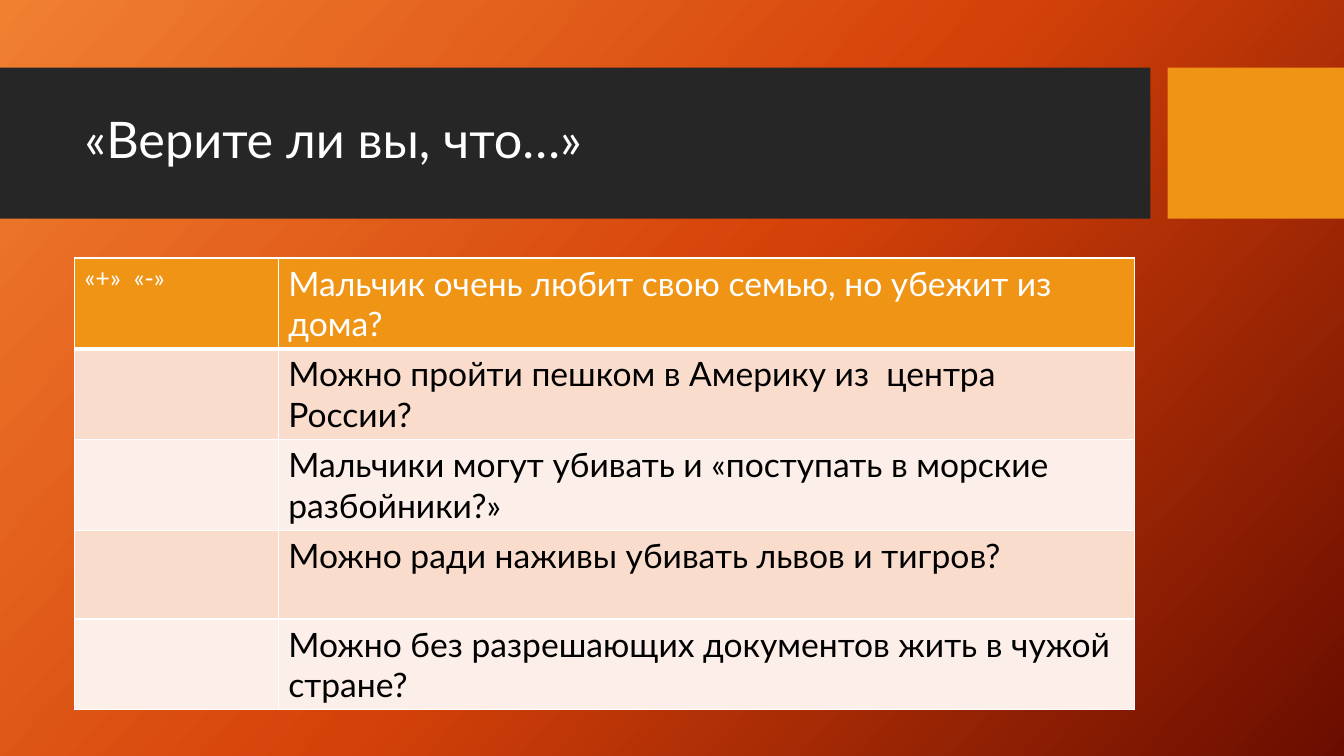
from copy import deepcopy

from lxml import etree
from pptx import Presentation
from pptx.dml.color import RGBColor
from pptx.enum.shapes import MSO_SHAPE
from pptx.enum.text import MSO_ANCHOR, MSO_AUTO_SIZE, PP_ALIGN
from pptx.oxml.ns import qn
from pptx.util import Inches, Pt

RECTANGLE = MSO_SHAPE.RECTANGLE
MIDDLE = MSO_ANCHOR.MIDDLE
LEFT = PP_ALIGN.LEFT
NO_AUTOFIT = MSO_AUTO_SIZE.NONE

WHITE = RGBColor(0xFF, 0xFF, 0xFF)
BLACK = RGBColor(0x00, 0x00, 0x00)
CHARCOAL = RGBColor(0x26, 0x26, 0x26)
AMBER = RGBColor(0xF0, 0x94, 0x15)
PEACH = RGBColor(0xF9, 0xDC, 0xCC)
PALE_PEACH = RGBColor(0xFC, 0xEE, 0xE8)

FONT = "Lato"
TITLE = "«Верите ли вы, что…»"
ANSWER_HEADING = "«+»  «-»"
QUESTIONS = [
    "Мальчик очень любит свою семью, но убежит из дома?",
    "Можно пройти пешком в Америку из  центра России?",
    "Мальчики могут убивать и «поступать в морские разбойники?»",
    "Можно ради наживы убивать львов и тигров?",
    "Можно без разрешающих документов жить в чужой стране?",
]
GRADIENT = [
    (0, RGBColor(0xF1, 0x80, 0x31)),
    (0.5, RGBColor(0xD5, 0x42, 0x09)),
    (1, RGBColor(0x6A, 0x0D, 0x00)),
]
GRADIENT_ANGLE = 360 - 42

SLIDE_WIDTH, SLIDE_HEIGHT = 13.33, 7.5
BAND_TOP, BAND_HEIGHT = 0.67, 1.5
BANDS = [(0, 11.41, CHARCOAL), (11.58, 1.75, AMBER)]
CONTENT_LEFT, CONTENT_WIDTH = 0.74, 10.51
TITLE_TOP, TITLE_HEIGHT = 0.82, 1.18
TABLE_TOP, ROW_HEIGHT = 2.56, 0.88
COLUMN_WIDTHS = [2.02, 8.49]


def paint_background(page):
    fill = page.background.fill
    fill.gradient()
    stop_list = page.element.find(".//" + qn("a:gsLst"))
    stop_list.append(deepcopy(stop_list[-1]))
    for stop, (position, color) in zip(fill.gradient_stops, GRADIENT):
        stop.position = position
        stop.color.rgb = color
    fill.gradient_angle = GRADIENT_ANGLE


def add_band(page, layer, left, width, color):
    band = page.shapes.add_shape(
        RECTANGLE, Inches(left), Inches(BAND_TOP), Inches(width), Inches(BAND_HEIGHT))
    band.shadow.inherit = False
    band.fill.solid()
    band.fill.fore_color.rgb = color
    band.line.fill.background()
    # Bands lie behind the title, after the two group property elements.
    page.shapes.element.insert(2 + layer, band.element)


def write(frame, text, size, color):
    para = frame.paragraphs[0]
    para.alignment = LEFT
    span = para.add_run()
    span.text = text
    for name, value in {"name": FONT, "size": Pt(size)}.items():
        setattr(span.font, name, value)
    span.font.color.rgb = color
    return para


def add_title(page):
    box = page.shapes.title
    place = {"left": CONTENT_LEFT, "top": TITLE_TOP,
             "width": CONTENT_WIDTH, "height": TITLE_HEIGHT}
    for name, value in place.items():
        setattr(box, name, Inches(value))
    frame = box.text_frame
    frame.auto_size = NO_AUTOFIT
    frame.word_wrap = True
    frame.vertical_anchor = MIDDLE
    write(frame, TITLE, 36, WHITE).line_spacing = 0.9


def set_borders(cell, widths):
    properties = cell._tc.get_or_add_tcPr()
    for index, (side, width) in enumerate(widths.items()):
        line = etree.Element(qn("a:ln" + side), w=str(Pt(width)))
        solid = etree.SubElement(line, qn("a:solidFill"))
        etree.SubElement(solid, qn("a:srgbClr"), val=str(WHITE))
        properties.insert(index, line)


def add_question_table(page):
    table = page.shapes.add_table(
        len(QUESTIONS), len(COLUMN_WIDTHS), Inches(CONTENT_LEFT), Inches(TABLE_TOP),
        Inches(CONTENT_WIDTH), Inches(ROW_HEIGHT * len(QUESTIONS))).table
    for column, width in zip(table.columns, COLUMN_WIDTHS):
        column.width = Inches(width)
    for index, question in enumerate(QUESTIONS):
        header = index == 0
        fill = AMBER if header else (PALE_PEACH, PEACH)[index % 2]
        color = WHITE if header else BLACK
        borders = {"L": 1, "R": 1, "T": 3 if index == 1 else 1, "B": 3 if header else 1}
        for cell in table.rows[index].cells:
            cell.fill.solid()
            cell.fill.fore_color.rgb = fill
            set_borders(cell, borders)
        write(table.cell(index, 1).text_frame, question, 24, color)
    write(table.cell(0, 0).text_frame, ANSWER_HEADING, 18, WHITE)


def main():
    deck = Presentation()
    deck.slide_width = Inches(SLIDE_WIDTH)
    deck.slide_height = Inches(SLIDE_HEIGHT)
    page = deck.slides.add_slide(deck.slide_layouts.get_by_name("Title Only"))
    paint_background(page)
    for layer, (left, width, color) in enumerate(BANDS):
        add_band(page, layer, left, width, color)
    add_title(page)
    add_question_table(page)
    deck.save("out.pptx")


if __name__ == "__main__":
    main()
